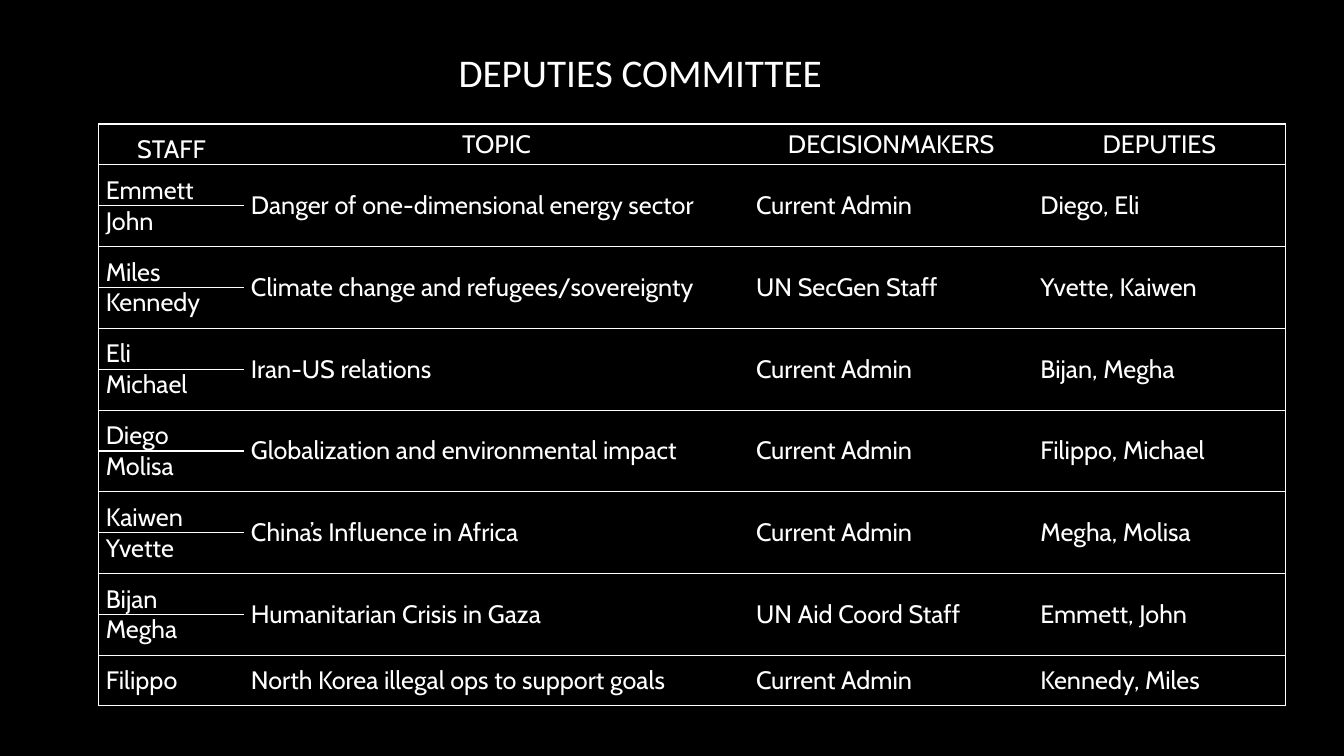
from lxml.etree import SubElement
from pptx import Presentation
from pptx.dml.color import RGBColor
from pptx.enum.text import MSO_ANCHOR, MSO_AUTO_SIZE, PP_ALIGN
from pptx.oxml.ns import qn
from pptx.util import Inches, Pt

BLACK = RGBColor(0x00, 0x00, 0x00)
WHITE = RGBColor(0xFF, 0xFF, 0xFF)

COLUMN_WIDTHS = [1.44, 5.01, 2.82, 2.5]
ROW_HEIGHT = 0.4
LAST_ROW_HEIGHT = 0.5
HEADERS = ["STAFF", "TOPIC", "DECISIONMAKERS", "DEPUTIES"]
ASSIGNMENTS = [
    (["Emmett", "John"], "Danger of one-dimensional energy sector", "Current Admin", "Diego, Eli"),
    (["Miles", "Kennedy"], "Climate change and refugees/sovereignty", "UN SecGen Staff", "Yvette, Kaiwen"),
    (["Eli", "Michael"], "Iran-US relations", "Current Admin", "Bijan, Megha"),
    (["Diego", "Molisa"], "Globalization and environmental impact", "Current Admin", "Filippo, Michael"),
    (["Kaiwen", "Yvette"], "China’s Influence in Africa", "Current Admin", "Megha, Molisa"),
    (["Bijan", "Megha"], "Humanitarian Crisis in Gaza", "UN Aid Coord Staff", "Emmett, John"),
    (["Filippo"], "North Korea illegal ops to support goals", "Current Admin", "Kennedy, Miles"),
]


def set_values(target, values):
    for name, value in values.items():
        setattr(target, name, value)


class CommitteeSlide:
    """Holds the style and the current slide."""

    title_font = {"name": "Calibri", "size": Pt(28)}
    table_font = {"name": "Cabin", "size": Pt(18), "bold": False}

    def __init__(self, presentation):
        self.slide = presentation.slides.add_slide(presentation.slide_layouts[6])
        fill = self.slide.background.fill
        fill.solid()
        fill.fore_color.rgb = BLACK

    def add_text(self, paragraph, text, font):
        run = paragraph.add_run()
        run.text = text
        set_values(run.font, font)
        run.font.color.rgb = WHITE

    def title(self, text, left, top, width, height):
        box = self.slide.shapes.add_textbox(*map(Inches, (left, top, width, height)))
        set_values(box.text_frame, {"word_wrap": False, "auto_size": MSO_AUTO_SIZE.SHAPE_TO_FIT_TEXT})
        self.add_text(box.text_frame.paragraphs[0], text, self.title_font)

    def table(self, left, top, widths, heights):
        frame = self.slide.shapes.add_table(
            len(heights), len(widths), Inches(left), Inches(top),
            Inches(sum(widths)), Inches(sum(heights)))
        table = frame.table
        set_values(table, {"first_row": False, "horz_banding": False})
        for column, width in zip(table.columns, widths):
            column.width = Inches(width)
        for row, height in zip(table.rows, heights):
            row.height = Inches(height)
        return table

    def cell(self, cell, text, anchor=MSO_ANCHOR.MIDDLE, alignment=PP_ALIGN.LEFT,
             inset_top=0, inset_bottom=0):
        set_values(cell, {
            "vertical_anchor": anchor,
            "margin_left": Inches(0.07), "margin_right": Inches(0.07),
            "margin_top": Inches(inset_top), "margin_bottom": Inches(inset_bottom)})
        paragraph = cell.text_frame.paragraphs[0]
        paragraph.alignment = alignment
        self.add_text(paragraph, text, self.table_font)

    def borders(self, cell, sides):
        properties = cell._tc.get_or_add_tcPr()
        for side in "LRTB":
            line = SubElement(properties, qn(f"a:ln{side}"), w=str(Pt(1)))
            if side in sides:
                solid = SubElement(line, qn("a:solidFill"))
                SubElement(solid, qn("a:srgbClr"), val=str(WHITE))
            else:
                SubElement(line, qn("a:noFill"))
        cell.fill.background()


def main():
    presentation = Presentation()
    set_values(presentation, {"slide_width": Inches(13.33), "slide_height": Inches(7.5)})
    page = CommitteeSlide(presentation)

    # Table grid: one row per staff member, below the header
    staff_count = sum(len(staff) for staff, *_ in ASSIGNMENTS)
    heights = [ROW_HEIGHT] * staff_count + [LAST_ROW_HEIGHT]
    table = page.table(0.98, 1.23, COLUMN_WIDTHS, heights)

    # Header row
    for column, header in enumerate(HEADERS):
        page.cell(table.cell(0, column), header, alignment=PP_ALIGN.CENTER,
                  inset_top=0 if column else 0.1)

    # Assignments: pairs of staff share one merged topic row
    shared_rows = set()
    row = 1
    for staff, *details in ASSIGNMENTS:
        paired = len(staff) == 2
        if paired:
            page.cell(table.cell(row, 0), staff[0], MSO_ANCHOR.BOTTOM, inset_top=0.1)
            page.cell(table.cell(row + 1, 0), staff[1], MSO_ANCHOR.TOP, inset_bottom=0.1)
            shared_rows.add(row)
        else:
            page.cell(table.cell(row, 0), staff[0])
        for column, text in enumerate(details, start=1):
            if paired:
                table.cell(row, column).merge(table.cell(row + 1, column))
            page.cell(table.cell(row, column), text)
        row += len(staff)

    # Borders: outer frame and row rules, none inside merged cells
    last_column = len(COLUMN_WIDTHS) - 1
    for row in range(len(heights)):
        for column in range(len(COLUMN_WIDTHS)):
            sides = {0: "L", last_column: "R"}.get(column, "")
            if column == 0 or row - 1 not in shared_rows:
                sides += "T"
            if column == 0 or row not in shared_rows:
                sides += "B"
            page.borders(table.cell(row, column), sides)

    # Title
    page.title("DEPUTIES COMMITTEE", 4.45, 0.43, 4.1, 0.57)

    presentation.save("out.pptx")


if __name__ == "__main__":
    main()
